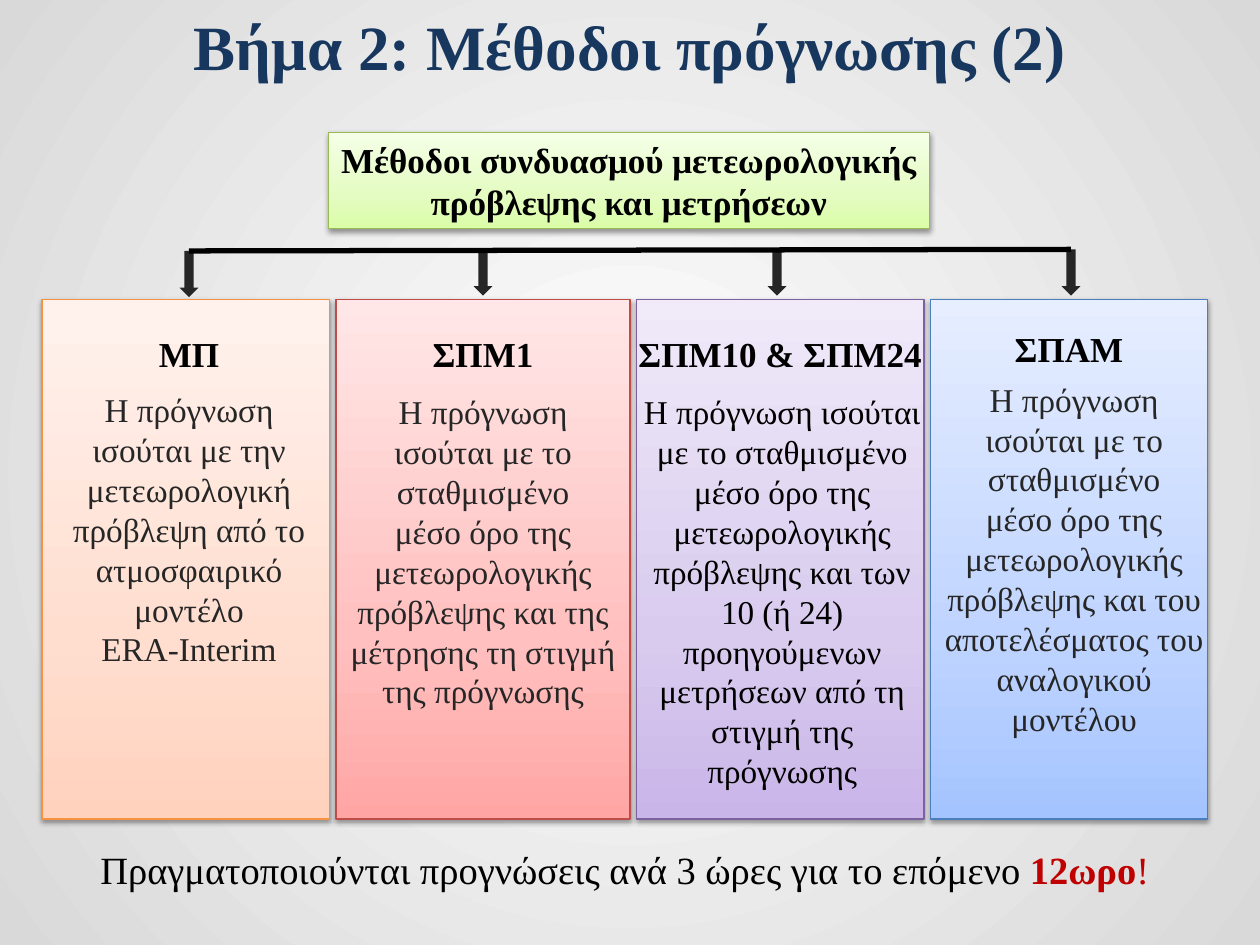
"""Build the slide on forecasting methods with four method panels."""
import copy

import lxml.etree
import pptx
import pptx.dml.color
import pptx.enum.shapes
import pptx.enum.text
import pptx.oxml.ns
import pptx.util

THEME = {
    "font": "Times New Roman",
    "title": (36, "17375E"),
    "heading": (20, "000000"),
    "body": (19, "262626"),
    "footer": (22, "000000"),
    "accent": "C00000",
    "arrow": "262626",
    "line": "000000",
    "page": ("FFFFFF", "D9D9D9"),
    "green": ("DAFDA7", "E4FCC2", "F5FFE7", "98B955"),
    "orange": ("FFD2BD", "FFDED0", "FFF2ED", "F69240"),
    "red": ("FFA6A5", "FFC0BF", "FFE7E7", "BF4C48"),
    "purple": ("C9B5E8", "D8CBEE", "F0EAF9", "7D60A0"),
    "blue": ("A4C4FF", "BFD4FF", "E6EEFF", "4B7EBC"),
}
PANELS = [
    ("orange", (4, 27.4), "ΜΠ", (7.5, 31.1, 21), (4, 36.5, 28, 28), "262626",
     "Η πρόγνωση ισούται με την μετεωρολογική πρόβλεψη από το ατμοσφαιρικό μοντέλο\vERA-Interim"),
    ("red", (32, 28), "ΣΠΜ1", (35.5, 31.1, 21), (32, 36.7, 28, 32), "262626",
     "Η πρόγνωση ισούται με το σταθμισμένο\vμέσο όρο της μετεωρολογικής πρόβλεψης "
     "και της μέτρησης τη στιγμή της πρόγνωσης"),
    ("purple", (60.6, 27.4), "ΣΠΜ10 & ΣΠΜ24", (59.6, 31.1, 29.4), (60, 36.7, 29, 39.6), "000000",
     "Η πρόγνωση ισούται με το σταθμισμένο\vμέσο όρο της μετεωρολογικής πρόβλεψης "
     "και των 10 (ή 24) προηγούμενων μετρήσεων από τη στιγμή της πρόγνωσης"),
    ("blue", (88.6, 26.4), "ΣΠΑΜ", (91.3, 30.6, 21), (88.6, 35.5, 27.4, 35.8), "262626",
     "Η πρόγνωση ισούται με το σταθμισμένο\vμέσο όρο της μετεωρολογικής πρόβλεψης "
     "και του αποτελέσματος του αναλογικού μοντέλου"),
]
COLUMNS = 120
FIRST_ARROW, ARROW_PITCH = 18, 28
Color = pptx.dml.color.RGBColor.from_string
Shape = pptx.enum.shapes.MSO_SHAPE
qn = pptx.oxml.ns.qn

deck = pptx.Presentation()
deck.slide_width = pptx.util.Inches(10)
deck.slide_height = pptx.util.Inches(7.5)
page = deck.slides.add_slide(deck.slide_layouts[6])
CELL = deck.slide_width / COLUMNS


def write(box, text, size, color, bold=False):
    frame = box.text_frame
    frame.word_wrap = True
    frame.text = text
    para = frame.paragraphs[0]
    para.alignment = pptx.enum.text.PP_ALIGN.CENTER
    for span in para.runs:
        span.font.name = THEME["font"]
        span.font.size = pptx.util.Pt(size)
        span.font.bold = bold
        span.font.color.rgb = Color(color)
    return para


def add_card(shapes, area, colors):
    card = shapes.add_shape(Shape.RECTANGLE, *(round(n * CELL) for n in area))
    dark, middle, light, border = colors
    card.fill.gradient()
    card.fill.gradient_angle = 90
    for stop, color in zip(card.fill.gradient_stops, (dark, light)):
        stop.color.rgb = Color(color)
    stops = card._element.spPr.find(".//" + qn("a:gsLst"))
    stops.insert(1, copy.deepcopy(stops[0]))
    card.fill.gradient_stops[1].position = 0.35
    card.fill.gradient_stops[1].color.rgb = Color(middle)
    card.line.color.rgb = Color(border)
    card.line.width = pptx.util.Pt(0.75)
    card.shadow.inherit = False
    effects = card._element.spPr.find(qn("a:effectLst"))
    shadow = lxml.etree.SubElement(
        effects, qn("a:outerShdw"), blurRad=str(pptx.util.Pt(3.1)),
        dist=str(pptx.util.Pt(1.6)), dir="5400000", rotWithShape="0")
    black = lxml.etree.SubElement(shadow, qn("a:srgbClr"), val="000000")
    lxml.etree.SubElement(black, qn("a:alpha"), val="38000")
    return card


backdrop = page.background.fill
backdrop.gradient()
for stop, color in zip(backdrop.gradient_stops, THEME["page"]):
    stop.color.rgb = Color(color)
linear = page._element.find(".//" + qn("a:lin"))
radial = lxml.etree.Element(qn("a:path"), path="circle")
lxml.etree.SubElement(radial, qn("a:fillToRect"), l="50000", t="50000", r="50000", b="50000")
linear.getparent().replace(linear, radial)

title = page.shapes.add_textbox(*(round(n * CELL) for n in (6, 0, 108, 8.6)))
title.text_frame.vertical_anchor = pptx.enum.text.MSO_ANCHOR.MIDDLE
write(title, "Βήμα 2: Μέθοδοι πρόγνωσης (2)", *THEME["title"], bold=True)

banner = add_card(page.shapes, (31.3, 12.6, 57.2, 9.2), THEME["green"])
banner.text_frame.vertical_anchor = pptx.enum.text.MSO_ANCHOR.MIDDLE
banner.text_frame.margin_left = banner.text_frame.margin_right = round(CELL / 2)
write(banner, "Μέθοδοι συνδυασμού μετεωρολογικής πρόβλεψης και μετρήσεων",
      *THEME["heading"], bold=True)

for index, (tone, (left, width), name, heading_area, body_area, ink, text) in enumerate(PANELS):
    panel = page.shapes.add_group_shape()
    add_card(panel.shapes, (left, 28.5, width, 49.5), THEME[tone])
    heading = panel.shapes.add_textbox(*(round(n * CELL) for n in (*heading_area, 5.3)))
    write(heading, name, *THEME["heading"], bold=True)
    body = panel.shapes.add_textbox(*(round(n * CELL) for n in body_area))
    write(body, text, THEME["body"][0], ink)

    center = FIRST_ARROW + index * ARROW_PITCH
    top = 23.9 if index == 0 else 23.75
    arrow = page.shapes.add_shape(
        Shape.DOWN_ARROW, *(round(n * CELL) for n in (center - 0.9, top, 1.8, 4.4)))
    arrow.fill.solid()
    arrow.fill.fore_color.rgb = Color(THEME["arrow"])
    arrow.line.fill.background()
    arrow.shadow.inherit = False

last_arrow = FIRST_ARROW + (len(PANELS) - 1) * ARROW_PITCH
branch = page.shapes.add_connector(
    pptx.enum.shapes.MSO_CONNECTOR.STRAIGHT,
    *(round(n * CELL) for n in (FIRST_ARROW, 23.9, last_arrow, 23.75)))
branch.line.color.rgb = Color(THEME["line"])
branch.line.width = pptx.util.Pt(3)
lxml.etree.SubElement(branch._element.spPr, qn("a:effectLst"))

footer = page.shapes.add_textbox(*(round(n * CELL) for n in (4, 80, 111, 5.6)))
para = write(footer, "Πραγματοποιούνται προγνώσεις ανά 3 ώρες για το επόμενο ", *THEME["footer"])
for text, bold in (("12ωρο", True), ("!", False)):
    span = para.add_run()
    span.text = text
    span.font.name = THEME["font"]
    span.font.size = pptx.util.Pt(THEME["footer"][0])
    span.font.bold = bold
    span.font.color.rgb = Color(THEME["accent"])

deck.save("out.pptx")
